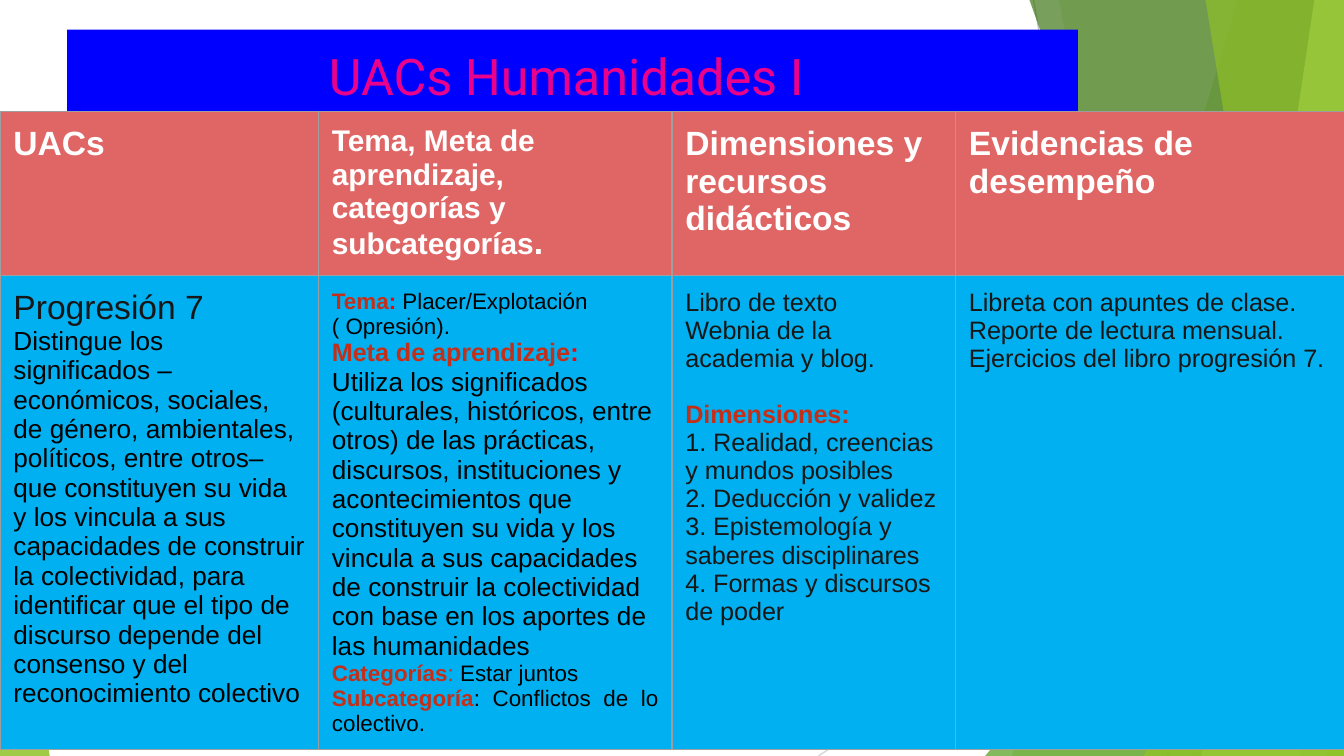
"""Build the Humanidades I slide: a title banner over a table of learning units."""
from pptx import Presentation
from pptx.dml.color import RGBColor as RGB
from pptx.enum.shapes import MSO_CONNECTOR as LINK, MSO_SHAPE as SHAPE
from pptx.enum.text import MSO_ANCHOR as ANCHOR, PP_ALIGN as ALIGN
from pptx.oxml import parse_xml
from pptx.oxml.ns import nsdecls, qn
from pptx.util import Inches, Pt

WHITE = RGB(0xFF, 0xFF, 0xFF)
BLACK = RGB(0, 0, 0)
DARK = RGB(0x17, 0x17, 0x17)
BRICK = RGB(0xC4, 0x2F, 0x1A)
RED = RGB(0xFF, 0, 0)
BLUE = RGB(0, 0, 0xFF)
PINK = RGB(0xEB, 0, 0x8B)
CORAL = RGB(0xE0, 0x66, 0x66)
SKY = RGB(0, 0xB0, 0xF0)
LIME = RGB(0x90, 0xC2, 0x26)
GREEN = RGB(0x54, 0xA0, 0x21)
MOSS = RGB(0x3F, 0x78, 0x18)
PALE = RGB(0xBF, 0xE4, 0x71)
SILVER = RGB(0xBF, 0xBF, 0xBF)
MIST = RGB(0xD8, 0xD8, 0xD8)
BORDER = "9E9E9E"

WIDE = 10
HIGH = WIDE * 9 / 16
TITLE = "UACs Humanidades I "
COLS = [2.37, 2.63, 2.11, 2.94]
ROWS = [1.22, 3.52]
LINES = [((7.69, 0), (8.69, HIGH), SILVER), ((WIDE, 3.02), (6.09, HIGH), MIST)]
DECOR = [
    ("band", (9.21, 7.53), LIME, 30),
    ("band", (7.88, 8.87), LIME, 20),
    ("peak", (7.33, 2.5, 2.67, 1), GREEN, 72),
    ("band", (7.66, 9.68), MOSS, 70),
    ("band", (9.78, 8.94), PALE, 70),
    ("band", (8.97, 9.88), LIME, 65),
    ("peak", (8.51, 2.94, 1.49, 1), LIME, 80),
    ("peak", (0, 3.29, 0.37, 0), LIME, 85),
]

HEAD = (18, WHITE, True)
SUB = (16, WHITE, True)
LEAD = (18, DARK, False)
BODY = (14, BLACK, False)
SMALL = (12, BLACK, False)
TAG = (12, BRICK, True)
GOAL = (13.5, BRICK, True)
ITEM = (13.5, DARK, False)


def para(*runs, align=None, gap=0):
    return runs, align, gap


HEADS = [
    [para(("UACs", HEAD))],
    [para(("Tema, Meta de aprendizaje, categorías y subcategorías", SUB), (".", HEAD))],
    [para(("Dimensiones y recursos didácticos", HEAD))],
    [para(("Evidencias de desempeño", HEAD))],
]
UNIT = [
    [
        para(("Progresión 7", LEAD)),
        para(("Distingue los significados –económicos, sociales, de género, "
              "ambientales, políticos, entre otros– que constituyen su vida y los "
              "vincula a sus capacidades de construir la colectividad, para "
              "identificar que el tipo de discurso depende del consenso y del "
              "reconocimiento colectivo", BODY)),
    ],
    [
        para(("Tema", TAG), (":", (12, RED, True)), (" Placer/Explotación", SMALL)),
        para(("( Opresión).", SMALL)),
        para(("Meta de aprendizaje", GOAL), (":", (13.5, RED, True))),
        para(("Utiliza los significados (culturales, históricos, entre otros) de "
              "las prácticas, discursos, instituciones y acontecimientos que "
              "constituyen su vida y los vincula a sus capacidades de construir la "
              "colectividad con base en los aportes de las humanidades", BODY)),
        para(("Categorías", TAG), (":", (12, BRICK, False)),
             (" Estar juntos", SMALL), align=ALIGN.JUSTIFY),
        para(("Subcategoría", TAG), (": Conflictos de lo colectivo.", SMALL),
             align=ALIGN.JUSTIFY),
    ],
    [
        para(("Libro de texto", ITEM)),
        para(("Webnia de la academia y blog.", ITEM)),
        para(("Dimensiones:", GOAL), gap=15),
        para(("1. Realidad, creencias y mundos posibles", ITEM)),
        para(("2. Deducción y validez", ITEM)),
        para(("3. Epistemología y saberes disciplinares", ITEM)),
        para(("4. Formas y discursos de poder", ITEM)),
    ],
    [
        para(("Libreta con apuntes de clase.", ITEM)),
        para(("Reporte de lectura mensual.", ITEM)),
        para(("Ejercicios del libro progresión 7.", ITEM)),
    ],
]


def style(run, face, size, color, bold=False):
    run.font.name, run.font.size, run.font.bold = face, Pt(size), bold
    run.font.color.rgb = color


def inset(box):
    box.margin_left = box.margin_right = Inches(0.1)
    box.margin_top = box.margin_bottom = Inches(0.1)


def draw_line(shapes, start, end, color):
    line = shapes.add_connector(LINK.STRAIGHT, *map(Inches, start + end))
    line.line.color.rgb, line.line.width = color, Pt(0.75)
    line._element.spPr.append(parse_xml(f"<a:effectLst {nsdecls('a')}/>"))


def draw_decor(shapes, kind, place, color, alpha):
    if kind == "band":
        top, foot = place
        pen = shapes.build_freeform(Inches(top), 0)
        ends = [(WIDE, 0), (WIDE, HIGH), (foot, HIGH)]
        pen.add_line_segments([(Inches(x), Inches(y)) for x, y in ends])
        shape = pen.convert_to_shape()
    else:
        x, y, w, tip = place
        shape = shapes.add_shape(SHAPE.ISOSCELES_TRIANGLE,
                                 *map(Inches, (x, y, w, HIGH - y)))
        shape.adjustments[0] = tip
    shape.shadow.inherit = False
    shape.line.fill.background()
    shape.fill.solid()
    shape.fill.fore_color.rgb = color
    tint = shape._element.spPr.find(qn("a:solidFill"))[0]
    tint.append(parse_xml(f'<a:alpha {nsdecls("a")} val="{alpha * 1000}"/>'))


def fill_cell(cell, paras, color):
    inset(cell)
    props = cell._tc.get_or_add_tcPr()
    for side in "LRTB":
        props.append(parse_xml(
            f'<a:ln{side} {nsdecls("a")} w="{Pt(0.75)}"><a:solidFill>'
            f'<a:srgbClr val="{BORDER}"/></a:solidFill></a:ln{side}>'))
    cell.fill.solid()
    cell.fill.fore_color.rgb = color
    frame = cell.text_frame
    for i, (runs, align, gap) in enumerate(paras):
        p = frame.add_paragraph() if i else frame.paragraphs[0]
        p.alignment, p.space_before = align, Pt(gap)
        for text, look in runs:
            run = p.add_run()
            run.text = text
            style(run, "Arial", *look)


def set_title(shapes):
    title = shapes.title
    shapes._spTree.append(title._element)
    title.left, title.top = Inches(0.5), Inches(0.22)
    title.width, title.height = Inches(7.52), Inches(0.74)
    title.fill.solid()
    title.fill.fore_color.rgb = BLUE
    frame = title.text_frame
    frame.text = TITLE
    frame.vertical_anchor = ANCHOR.MIDDLE
    inset(frame)
    p = frame.paragraphs[0]
    p.alignment, p.line_spacing = ALIGN.CENTER, 0.9
    style(p.runs[0], "Roboto", 27, PINK)


def main():
    deck = Presentation()
    deck.slide_width, deck.slide_height = Inches(WIDE), Inches(HIGH)
    shapes = deck.slides.add_slide(deck.slide_layouts[5]).shapes
    for line in LINES:
        draw_line(shapes, *line)
    for part in DECOR:
        draw_decor(shapes, *part)
    set_title(shapes)
    size = map(Inches, (0, 0.83, sum(COLS), sum(ROWS)))
    table = shapes.add_table(len(ROWS), len(COLS), *size).table
    for col, w in zip(table.columns, COLS):
        col.width = Inches(w)
    for r, (cells, color) in enumerate([(HEADS, CORAL), (UNIT, SKY)]):
        table.rows[r].height = Inches(ROWS[r])
        for c, paras in enumerate(cells):
            fill_cell(table.cell(r, c), paras, color)
    deck.save("out.pptx")


if __name__ == "__main__":
    main()
